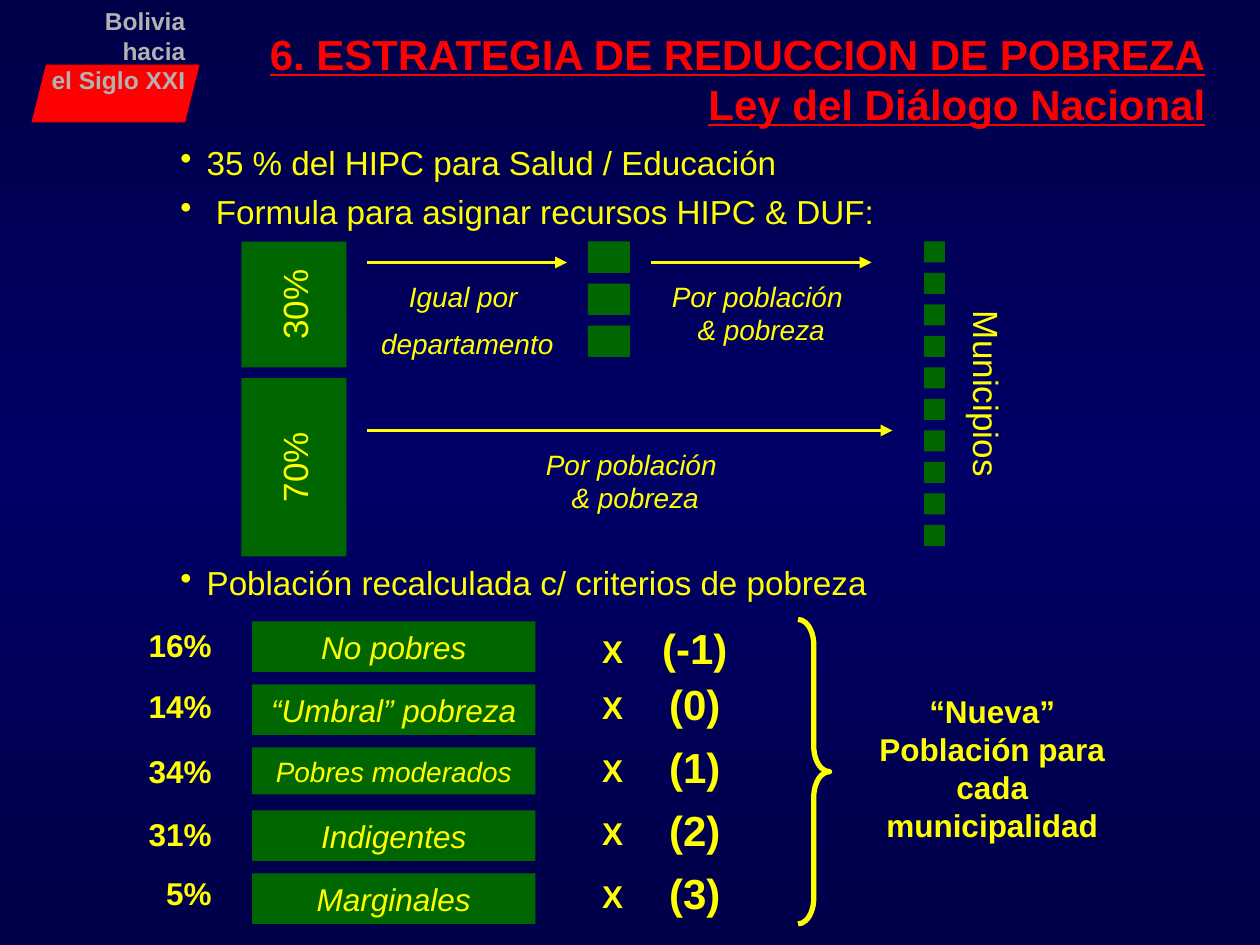
from copy import deepcopy

from pptx import Presentation
from pptx.dml.color import RGBColor
from pptx.enum.shapes import MSO_CONNECTOR, MSO_SHAPE
from pptx.enum.text import MSO_ANCHOR, PP_ALIGN
from pptx.oxml.ns import qn
from pptx.oxml.xmlchemy import OxmlElement
from pptx.util import Pt

RECT, BRACE = MSO_SHAPE.RECTANGLE, MSO_SHAPE.RIGHT_BRACE
EMBLEM = MSO_SHAPE.PARALLELOGRAM
STRAIGHT = MSO_CONNECTOR.STRAIGHT
LEFT, CENTER, RIGHT = PP_ALIGN.LEFT, PP_ALIGN.CENTER, PP_ALIGN.RIGHT
TOP, MIDDLE = MSO_ANCHOR.TOP, MSO_ANCHOR.MIDDLE

COLORS = {
    "edge": "000049",
    "centre": "000066",
    "yellow": "FFFF00",
    "green": "006600",
    "red": "FF0000",
    "grey": "B2B2B2",
}


class SlideBuilder:
    font = "Arial"

    def __init__(self, page):
        self.page = page

    def color(self, name):
        return RGBColor.from_string(COLORS[name])

    def background(self):
        fill = self.page.background.fill
        fill.gradient()
        fill.gradient_angle = 90
        stops = self.page.element.find(".//" + qn("a:gsLst"))
        stops.insert(1, deepcopy(stops[0]))
        for stop, position, name in zip(
            fill.gradient_stops, (0, 0.5, 1), ("edge", "centre", "edge")
        ):
            stop.position = position
            stop.color.rgb = self.color(name)

    def set_text(self, shape, lines, size, color="yellow", align=CENTER, anchor=TOP,
                 gap=0, bold=False, italic=False, underline=False):
        frame = shape.text_frame
        frame.word_wrap = True
        frame.vertical_anchor = anchor
        frame.text = "\n".join(lines)
        for index, para in enumerate(frame.paragraphs):
            para.alignment = align
            para.space_before = Pt(gap if index else 0)
            font = para.font
            font.name, font.size = self.font, Pt(size)
            font.bold, font.italic, font.underline = bold, italic, underline
            font.color.rgb = self.color(color)

    def text(self, left, top, width, height, lines, size, rotation=0, **style):
        box = self.page.shapes.add_textbox(Pt(left), Pt(top), Pt(width), Pt(height))
        box.rotation = rotation
        self.set_text(box, lines, size, **style)
        return box

    def bullets(self, left, top, width, height, lines, size):
        box = self.text(left, top, width, height, lines, size, align=LEFT, gap=5)
        for para in box.text_frame.paragraphs:
            props = para._p.get_or_add_pPr()
            props.set("marL", str(Pt(15)))
            props.set("indent", str(Pt(-15)))
            bullet = OxmlElement("a:buChar")
            bullet.set("char", "•")
            props.insert_element_before(bullet, "a:tabLst", "a:defRPr", "a:extLst")

    def block(self, left, top, width, height, lines=(), size=18, kind=RECT,
              fill="green", rotation=0, **style):
        shape = self.page.shapes.add_shape(kind, Pt(left), Pt(top), Pt(width), Pt(height))
        shape.shadow.inherit = False
        shape.rotation = rotation
        shape.fill.solid()
        shape.fill.fore_color.rgb = self.color(fill)
        shape.line.fill.background()
        if lines:
            self.set_text(shape, lines, size, anchor=MIDDLE, **style)

    def brace(self, left, top, width, height):
        shape = self.page.shapes.add_shape(BRACE, Pt(left), Pt(top), Pt(width), Pt(height))
        shape.shadow.inherit = False
        shape.adjustments[0] = 0.81
        shape.fill.background()
        shape.line.color.rgb = self.color("yellow")
        shape.line.width = Pt(3)

    def arrow(self, start, end, y):
        line = self.page.shapes.add_connector(STRAIGHT, Pt(start), Pt(y), Pt(end), Pt(y))
        line.line.color.rgb = self.color("yellow")
        line.line.width = Pt(2.25)
        head = OxmlElement("a:tailEnd")
        head.set("type", "triangle")
        properties = line._element.spPr
        properties.find(qn("a:ln")).append(head)
        properties.append(OxmlElement("a:effectLst"))


def main():
    deck = Presentation()
    deck.slide_width, deck.slide_height = Pt(720), Pt(540)
    slide = SlideBuilder(deck.slides.add_slide(deck.slide_layouts[6]))
    slide.background()

    # Header: emblem, campaign words and title
    slide.block(18, 37, 96, 33, kind=EMBLEM, fill="red")
    slide.text(13, 0, 100, 58, ["Bolivia\vhacia", "el Siglo XXI"], 14,
               color="grey", align=RIGHT, bold=True)
    slide.text(84, 0, 612, 90,
               ["6. ESTRATEGIA DE REDUCCION DE POBREZA", "Ley del Diálogo Nacional"],
               24, color="red", align=RIGHT, anchor=MIDDLE, bold=True, underline=True)

    # Main points
    slide.bullets(96, 78, 558, 58, ["35 % del HIPC para Salud / Educación",
                                    " Formula para asignar recursos HIPC & DUF:"], 19)
    slide.bullets(96, 318, 558, 30, ["Población recalculada c/ criterios de pobreza"], 19)

    # Distribution formula: shares, departments and municipalities
    slide.block(132, 144, 72, 60, ["30%"], 20, rotation=270)
    slide.block(117, 237, 102, 60, ["70%"], 20, rotation=270)
    for index in range(3):
        slide.block(336, 138 + 24 * index, 24, 18)
    for index in range(10):
        slide.block(528, 138 + 18 * index, 12, 12)
    slide.text(489, 195, 150, 60, ["Municipios"], 20, rotation=90, anchor=MIDDLE)

    for start, end, y in ((210, 510, 246), (210, 324, 150), (372, 498, 150)):
        slide.arrow(start, end, y)
    by_poverty = ["Por población \v& pobreza"]
    for left, top, lines in (
        (342, 156, by_poverty),
        (174, 156, ["Igual por ", "departamento"]),
        (270, 252, by_poverty),
    ):
        slide.text(left, top, 186, 46, lines, 16, gap=8, italic=True)

    # Weighted population groups: share, share top, group, size, weight, weight top
    groups = (
        ("16%", 354, "No pobres", 18, "(-1)", 352),
        ("14%", 389, "“Umbral” pobreza", 18, "(0)", 384),
        ("34%", 426, "Pobres moderados", 16, "(1)", 420),
        ("31%", 462, "Indigentes", 18, "(2)", 456),
        ("5%", 496, "Marginales", 18, "(3)", 492),
    )
    for index, (share, share_top, group, size, weight, weight_top) in enumerate(groups):
        slide.text(12, share_top, 116, 29, [share], 18, align=RIGHT, bold=True)
        slide.block(144, 355 + 36 * index, 162, 29 if size == 18 else 27,
                    [group], size, italic=True)
        slide.text(330, weight_top + 5.4, 40, 29, ["X"], 18, bold=True)
        slide.text(362, weight_top, 70, 36, [weight], 24, bold=True)

    # Result
    slide.brace(456, 354, 18, 174)
    slide.text(486, 392, 162, 94, ["“Nueva” Población para cada municipalidad"], 18, bold=True)

    deck.save("out.pptx")


if __name__ == "__main__":
    main()
